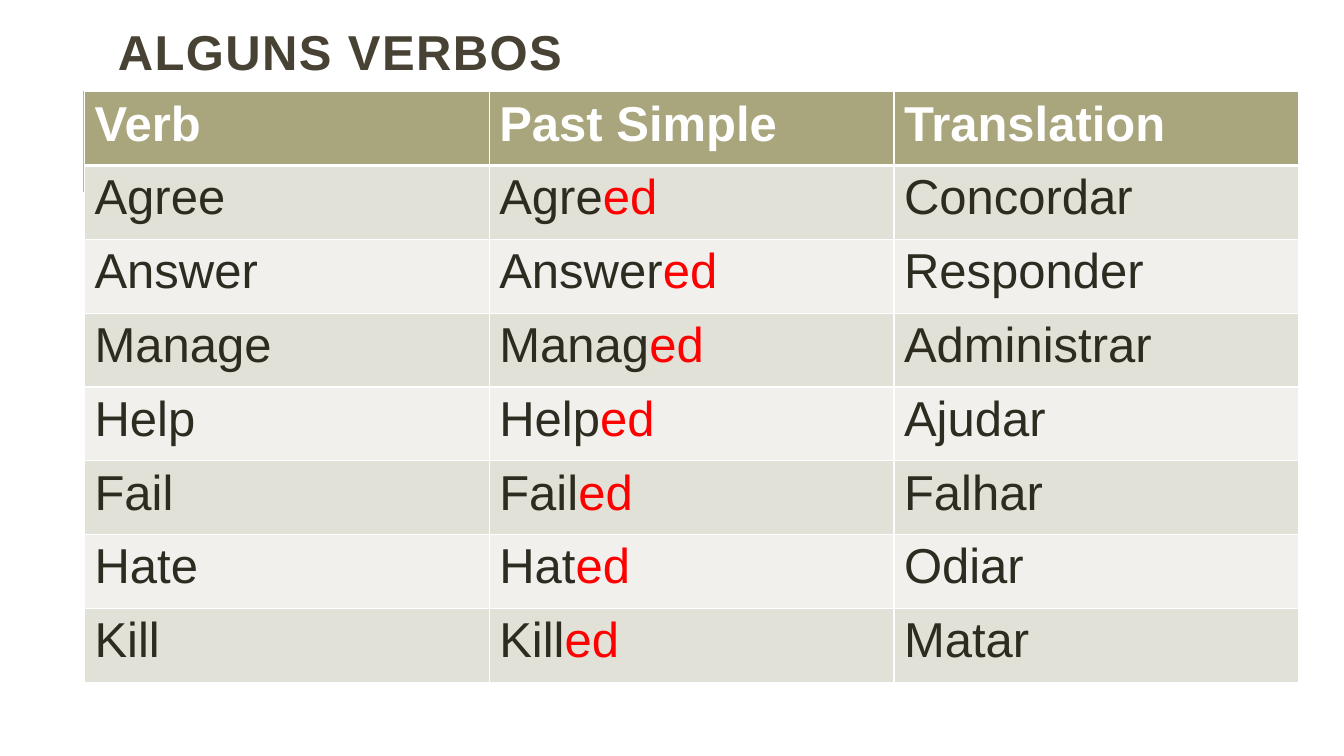
from dataclasses import dataclass
from typing import Any

import lxml.etree
import pptx
import pptx.dml.color
import pptx.enum.text
import pptx.oxml.ns
import pptx.util

Cm = pptx.util.Cm
Pt = pptx.util.Pt


@dataclass(frozen=True)
class Theme:
    font: str = "Arial"
    size: int = 35
    title: str = "474233"
    accent_line: str = "9CBEBD"
    header: str = "A9A57C"
    bands: tuple[str, str] = ("E2E1D7", "F1F0EC")
    white: str = "FFFFFF"
    ink: str = "2E2B21"
    ending: str = "FF0000"
    border: int = 1
    header_border: int = 3


@dataclass(frozen=True)
class Verb:
    base: str
    past_stem: str
    translation: str


@dataclass(frozen=True)
class Piece:
    text: str
    color: str
    bold: bool = False


THEME = Theme()
HEADINGS = ("Verb", "Past Simple", "Translation")
VERBS = (
    Verb("Agree", "Agre", "Concordar"),
    Verb("Answer", "Answer", "Responder"),
    Verb("Manage", "Manag", "Administrar"),
    Verb("Help", "Help", "Ajudar"),
    Verb("Fail", "Fail", "Falhar"),
    Verb("Hate", "Hat", "Odiar"),
    Verb("Kill", "Kill", "Matar"),
)
COLUMN_WIDTH = Cm(10.2)
ROW_HEIGHT = Cm(1.86)


def rgb(color: str) -> pptx.dml.color.RGBColor:
    return pptx.dml.color.RGBColor.from_string(color)


def write(paragraph: Any, *pieces: Piece) -> None:
    for piece in pieces:
        run = paragraph.add_run()
        run.text = piece.text
        font_values = {"name": THEME.font, "size": Pt(THEME.size), "bold": piece.bold}
        for name, value in font_values.items():
            setattr(run.font, name, value)
        run.font.color.rgb = rgb(piece.color)


def add_border(cell: Any, side: str, width: int) -> None:
    qn = pptx.oxml.ns.qn
    properties = cell._tc.get_or_add_tcPr()
    line = lxml.etree.SubElement(properties, qn(f"a:ln{side}"), w=str(Pt(width)))
    fill = lxml.etree.SubElement(line, qn("a:solidFill"))
    lxml.etree.SubElement(fill, qn("a:srgbClr"), val=THEME.white)


def fill_row(table: Any, row: int, fill: str, cells: list[list[Piece]]) -> None:
    """Write one table row; the edge below the header row is thicker."""
    widths = {"L": THEME.border, "R": THEME.border,
              "T": THEME.header_border if row == 1 else THEME.border,
              "B": THEME.header_border if row == 0 else THEME.border}
    for column, pieces in enumerate(cells):
        cell = table.cell(row, column)
        for side, width in widths.items():
            add_border(cell, side, width)
        cell.fill.solid()
        cell.fill.fore_color.rgb = rgb(fill)
        write(cell.text_frame.paragraphs[0], *pieces)


def add_accent_line(slide: Any) -> None:
    accent = slide.shapes.add_connector(
        pptx.enum.shapes.MSO_CONNECTOR.STRAIGHT, Cm(2.11), Cm(4.83), Cm(2.11), Cm(2.29))
    accent.line.color.rgb = rgb(THEME.accent_line)
    accent.line.width = Pt(1.5)
    lxml.etree.SubElement(accent._element.spPr, pptx.oxml.ns.qn("a:effectLst"))


def add_title(slide: Any) -> None:
    title = slide.shapes.add_textbox(Cm(2.72), Cm(0.53), Cm(27), Cm(1.8))
    frame_values = {"word_wrap": True,
                    "vertical_anchor": pptx.enum.text.MSO_ANCHOR.MIDDLE}
    for name, value in frame_values.items():
        setattr(title.text_frame, name, value)
    paragraph = title.text_frame.paragraphs[0]
    paragraph.line_spacing = 0.8
    write(paragraph, Piece("ALGUNS VERBOS", THEME.title, True))
    paragraph.runs[0].font._element.set("spc", "100")


def add_verb_table(slide: Any) -> None:
    row_count, column_count = len(VERBS) + 1, len(HEADINGS)
    table = slide.shapes.add_table(
        row_count, column_count, Cm(2.13), Cm(2.31),
        COLUMN_WIDTH * column_count, ROW_HEIGHT * row_count).table
    fill_row(table, 0, THEME.header,
             [[Piece(heading, THEME.white, True)] for heading in HEADINGS])
    for row, verb in enumerate(VERBS, start=1):
        fill_row(table, row, THEME.bands[(row - 1) % 2], [
            [Piece(verb.base, THEME.ink)],
            [Piece(verb.past_stem, THEME.ink), Piece("ed", THEME.ending)],
            [Piece(verb.translation, THEME.ink)],
        ])


def main() -> None:
    presentation = pptx.Presentation()
    presentation.slide_width = Cm(33.87)
    presentation.slide_height = Cm(19.05)
    slide = presentation.slides.add_slide(presentation.slide_layouts[6])
    add_accent_line(slide)
    add_title(slide)
    add_verb_table(slide)
    presentation.save("out.pptx")


if __name__ == "__main__":
    import pptx.enum.shapes
    main()
